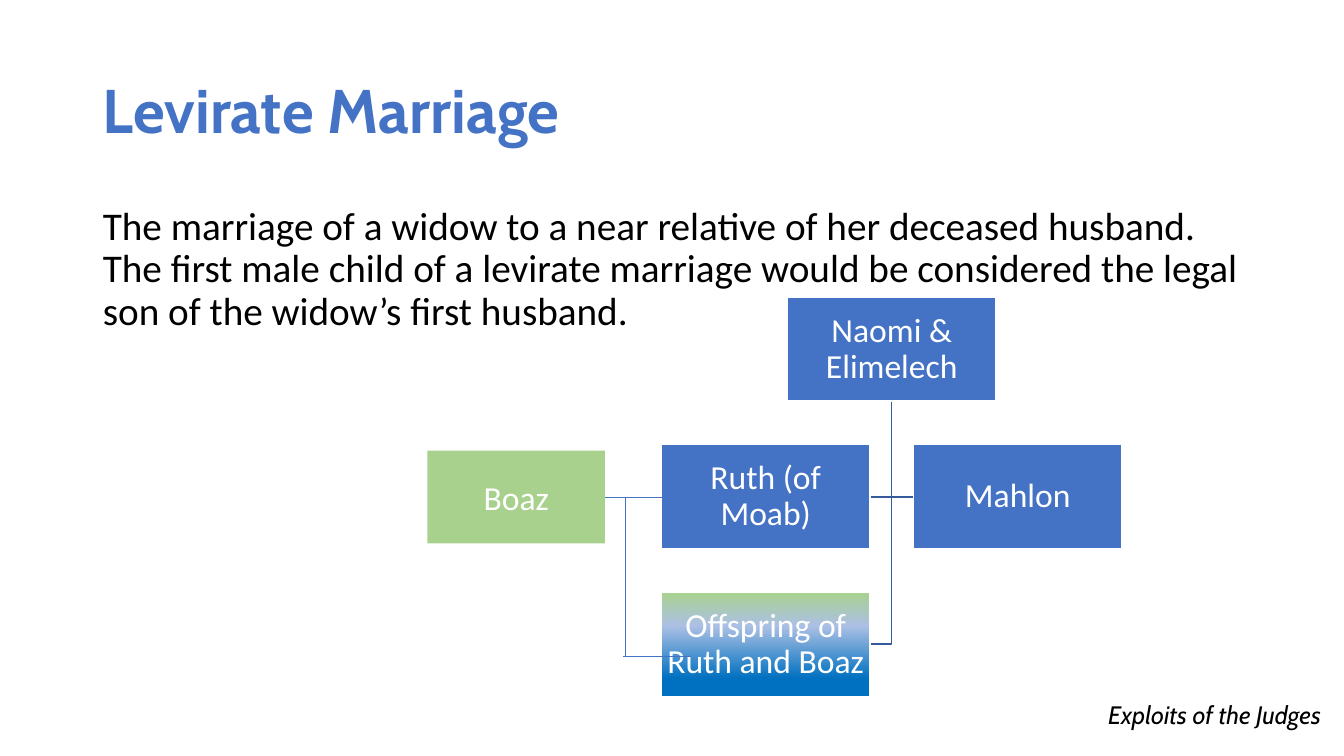
from dataclasses import dataclass

from lxml.etree import SubElement
from pptx import Presentation
from pptx.dml.color import RGBColor
from pptx.enum.shapes import MSO_CONNECTOR, MSO_SHAPE
from pptx.enum.text import MSO_ANCHOR as ANCHOR, MSO_AUTO_SIZE as AUTO, PP_ALIGN as ALIGN
from pptx.oxml.ns import qn
from pptx.util import Emu, Pt

PX = 9144
COLORS = {
    "blue": "4472C4",
    "tree_line": "365B9D",
    "green": "A9D18E",
    "pale_blue": "ABC0E4",
    "deep_blue": "0070C0",
    "white": "FFFFFF",
    "black": "000000",
}
BOX_W, BOX_H = 207, 103
TRUNK_X, TRUNK_TOP = 884, 398
RIGHT, LEFT = 862, 906


@dataclass(frozen=True)
class Person:
    text: str
    x: int
    y: int
    w: int = BOX_W
    h: int = BOX_H
    fill: str = "blue"
    outline: str | None = "white"
    inset: int = 2
    spacing: float = 0.9


@dataclass(frozen=True)
class Branch:
    x: int
    y: int


@dataclass(frozen=True)
class Line:
    x1: int
    y1: int
    x2: int
    y2: int


PEOPLE = [
    Person("Naomi & Elimelech", 781, 295),
    Person("Ruth (of Moab)", 656, 441),
    Person("Mahlon", 906, 441),
    Person("Offspring of Ruth and Boaz", 656, 588, fill="offspring"),
]
BOAZ = Person("Boaz", 424, 447, 176, 92, "green", None, 10, 1.0)
BRANCHES = [Branch(RIGHT, 639), Branch(LEFT, 493), Branch(RIGHT, 493)]
BOAZ_LINE = Line(600, 493, 667, 493)
CHILD_LINES = [Line(620, 493, 620, 651), Line(618, 651, 685, 651)]
OFFSPRING_STOPS = [(0, "green"), (32, "pale_blue"), (83, "deep_blue"), (100, "deep_blue")]


def px(*values: int) -> list[Emu]:
    return [Emu(v * PX) for v in values]


def rgb(name: str) -> RGBColor:
    return RGBColor.from_string(COLORS[name])


def write(sp, text: str, *, size: int, color: str, font: str = "Calibri",
          bold: bool = False, italic: bool = False, align=ALIGN.LEFT,
          anchor=ANCHOR.TOP, spacing: float = 1.0, inset: int | None = None,
          auto=AUTO.NONE) -> None:
    tf = sp.text_frame
    tf.word_wrap = True
    tf.auto_size = auto
    tf.vertical_anchor = anchor
    if inset is not None:
        tf.margin_left = tf.margin_right = tf.margin_top = tf.margin_bottom = Emu(inset * PX)
    p = tf.paragraphs[0]
    p.alignment = align
    p.line_spacing = spacing
    p.space_before = Pt(0)
    r = p.add_run()
    r.text = text
    f = r.font
    f.name, f.size, f.bold, f.italic = font, Pt(size), bold, italic
    f.color.rgb = rgb(color)


def place(sp, x: int, y: int, w: int, h: int) -> None:
    sp.left, sp.top, sp.width, sp.height = px(x, y, w, h)


def fill_offspring(sp) -> None:
    sp.fill.gradient()
    sp.fill.gradient_angle = 270
    stops = sp._element.spPr.find(qn("a:gradFill")).find(qn("a:gsLst"))
    for stop in list(stops):
        stops.remove(stop)
    for percent, color in OFFSPRING_STOPS:
        stop = SubElement(stops, qn("a:gs"), pos=str(percent * 1000))
        SubElement(stop, qn("a:srgbClr"), val=COLORS[color])


def add_person(shapes, person: Person):
    sp = shapes.add_shape(MSO_SHAPE.RECTANGLE, *px(person.x, person.y, person.w, person.h))
    sp.shadow.inherit = False
    if person.fill == "offspring":
        fill_offspring(sp)
    else:
        sp.fill.solid()
        sp.fill.fore_color.rgb = rgb(person.fill)
    if person.outline:
        sp.line.color.rgb = rgb(person.outline)
        sp.line.width = Pt(1)
    else:
        sp.line.fill.background()
    write(sp, person.text, size=24, color="white", align=ALIGN.CENTER,
          anchor=ANCHOR.MIDDLE, spacing=person.spacing, inset=person.inset)
    return sp


def add_branch(shapes, branch: Branch) -> None:
    builder = shapes.build_freeform(TRUNK_X, TRUNK_TOP, scale=PX)
    builder.add_line_segments([(TRUNK_X, branch.y), (branch.x, branch.y)], close=False)
    sp = builder.convert_to_shape()
    sp.shadow.inherit = False
    sp.fill.background()
    sp.line.color.rgb = rgb("tree_line")
    sp.line.width = Pt(1)


def add_line(shapes, line: Line):
    cxn = shapes.add_connector(MSO_CONNECTOR.STRAIGHT,
                               *px(line.x1, line.y1, line.x2, line.y2))
    cxn.line.color.rgb = rgb("blue")
    cxn.line.width = Pt(0.5)
    SubElement(cxn._element.spPr, qn("a:effectLst"))
    return cxn


def main() -> None:
    prs = Presentation()
    prs.slide_width, prs.slide_height = px(1333, 750)
    slide = prs.slides.add_slide(prs.slide_layouts[1])
    shapes = slide.shapes

    title, body = shapes.title, slide.placeholders[1]
    place(title, 92, 40, 1150, 145)
    write(title, "Levirate Marriage", size=44, color="blue", font="Cabin", bold=True,
          anchor=ANCHOR.MIDDLE, spacing=0.9)

    place(body, 92, 200, 1150, 476)
    pPr = body.text_frame.paragraphs[0]._p.get_or_add_pPr()
    pPr.set("marL", "0")
    pPr.set("indent", "0")
    SubElement(pPr, qn("a:buNone"))
    write(body, "The marriage of a widow to a near relative of her deceased husband. "
          "The first male child of a levirate marriage would be considered the legal "
          "son of the widow’s first husband.", size=28, color="black", spacing=0.9)

    for branch in BRANCHES:
        add_branch(shapes, branch)
    for person in PEOPLE:
        add_person(shapes, person)

    footer = shapes.add_textbox(*px(644, 689, 676, 40))
    write(footer, "Exploits of the Judges", size=18, color="black", font="Cabin",
          italic=True, align=ALIGN.RIGHT, auto=AUTO.SHAPE_TO_FIT_TEXT)

    boaz = add_person(shapes, BOAZ)
    add_line(shapes, BOAZ_LINE).begin_connect(boaz, 3)
    for line in CHILD_LINES:
        add_line(shapes, line)

    prs.save("out.pptx")


if __name__ == "__main__":
    main()
